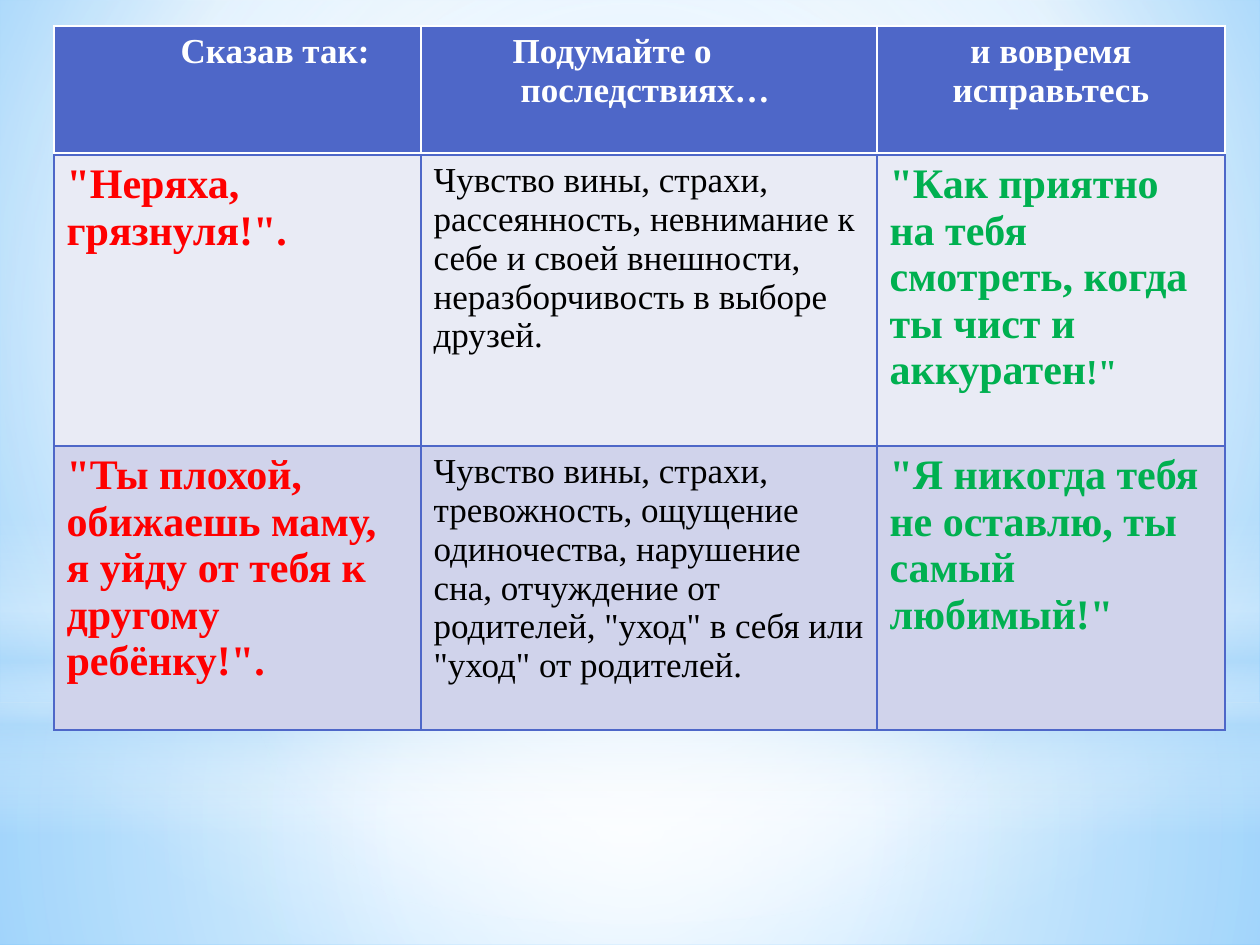
import lxml.etree
import pptx
import pptx.dml.color
import pptx.enum.shapes
import pptx.enum.text
import pptx.oxml.ns
import pptx.util

SCALE = 914400 / 126
FONT = "Times New Roman"
COLORS = {
    "white": "FFFFFF",
    "black": "000000",
    "sky": "9ED5FF",
    "azure": "5BB9FF",
    "pale": "B4DCFA",
    "header": "4E67C8",
    "light_row": "E9EBF5",
    "dark_row": "D0D3EB",
    "warning": "FF0000",
    "praise": "00B050",
}
COLUMNS = [367, 456, 348]
BODY_STYLES = [(24, "warning", True), (20, "black", False), (24, "praise", True)]
HEADERS = [
    [("Сказав так:", 114)],
    [("Подумайте о", 79), ("последствиях…", 87)],
    [("и вовремя исправьтесь", None)],
]
BODY = [
    [
        ['"Неряха, грязнуля!".'],
        ["Чувство вины, страхи, рассеянность, невнимание к себе и своей внешности, "
         "неразборчивость в выборе друзей."],
        ['"Как приятно на тебя смотреть, когда ты чист и аккуратен', '!"'],
    ],
    [
        ['"Ты плохой, обижаешь маму, я уйду от тебя к другому ребёнку!".'],
        ["Чувство вины, страхи, тревожность, ощущение одиночества, нарушение сна, "
         'отчуждение от родителей, "уход" в себя или "уход" от родителей.'],
        ['"Я никогда тебя не оставлю, ты самый любимый!"'],
    ],
]


def emu(pixels):
    return pptx.util.Emu(round(pixels * SCALE))


def rgb(name):
    return pptx.dml.color.RGBColor.from_string(COLORS[name])


def add_element(parent, tag, **attributes):
    element = lxml.etree.SubElement(parent, pptx.oxml.ns.qn(tag))
    for name, value in attributes.items():
        element.set(name, str(value))
    return element


def set_gradient(fill, owner, stops, focus=None):
    fill.gradient()
    gradient = next(owner.iter(pptx.oxml.ns.qn("a:gradFill")))
    for child in list(gradient):
        gradient.remove(child)
    stop_list = add_element(gradient, "a:gsLst")
    for position, color, opacity in stops:
        stop = add_element(stop_list, "a:gs", pos=position * 1000)
        color_element = add_element(stop, "a:srgbClr", val=COLORS[color])
        if opacity < 100:
            add_element(color_element, "a:alpha", val=opacity * 1000)
    if focus:
        path_element = add_element(gradient, "a:path", path="circle")
        sides = {side: value * 1000 for side, value in zip("ltrb", focus)}
        add_element(path_element, "a:fillToRect", **sides)
    else:
        add_element(gradient, "a:lin", ang=5400000, scaled=0)


def add_glow(slide, kind, box, stops, focus=None):
    shape = slide.shapes.add_shape(kind, *map(emu, box))
    shape.shadow.inherit = False
    shape.line.fill.background()
    set_gradient(shape.fill, shape.element, stops, focus)


def add_backdrop(slide, box):
    left, top, width, height = box
    kinds = pptx.enum.shapes.MSO_SHAPE
    center = (50, 50, 50, 50)
    horizon = 703
    set_gradient(slide.background.fill, slide.element,
                 [(0, "sky", 100), (60, "white", 100), (100, "azure", 100)], (20, 10, 20, 60))
    add_glow(slide, kinds.RECTANGLE, (left, top + horizon, width, height - horizon),
             [(0, "white", 91), (37, "white", 76), (100, "pale", 79)], center)
    add_glow(slide, kinds.RECTANGLE, (left, top, width, horizon),
             [(0, "white", 89), (48, "white", 62), (100, "pale", 79)], center)
    add_glow(slide, kinds.RECTANGLE, (left, top + 519, width, 315),
             [(0, "white", 0), (29, "white", 30), (45, "pale", 40),
              (55, "white", 26), (65, "pale", 60), (100, "white", 0)])
    add_glow(slide, kinds.OVAL, (left, top + 220, width, horizon),
             [(0, "white", 100), (56, "white", 0)], center)


def add_grid(slide, box, rows):
    shape = slide.shapes.add_table(len(rows), len(COLUMNS), *map(emu, box))
    table = shape.table
    for column, width in zip(table.columns, COLUMNS):
        column.width = emu(width)
    for row, height in zip(table.rows, rows):
        row.height = emu(height)
    return table


def style_cell(cell, fill, border, bottom=1):
    properties = cell._tc.get_or_add_tcPr()
    for side in "LRTB":
        width = bottom if side == "B" else 1
        line = add_element(properties, f"a:ln{side}", w=pptx.util.Pt(width))
        line_fill = add_element(line, "a:solidFill")
        add_element(line_fill, "a:srgbClr", val=COLORS[border])
    cell.fill.solid()
    cell.fill.fore_color.rgb = rgb(fill)


def style_run(run, size, color, bold):
    run.font.name = FONT
    run.font.size = pptx.util.Pt(size)
    run.font.bold = bold
    run.font.color.rgb = rgb(color)


def add_header(slide, box):
    table = add_grid(slide, box, [box[3]])
    for cell, lines in zip(table.rows[0].cells, HEADERS):
        style_cell(cell, "header", "white", 3)
        cell.text_frame.text = "\n".join(text for text, indent in lines)
        for paragraph, (text, indent) in zip(cell.text_frame.paragraphs, lines):
            if indent is None:
                paragraph.alignment = pptx.enum.text.PP_ALIGN.CENTER
            else:
                paragraph._p.get_or_add_pPr().set("marL", str(emu(indent)))
            style_run(paragraph.runs[0], 20, "white", True)


def add_body(slide, box):
    first_row = 291
    table = add_grid(slide, box, [first_row, box[3] - first_row])
    for row, texts, fill in zip(table.rows, BODY, ["light_row", "dark_row"]):
        for cell, parts, (size, color, bold) in zip(row.cells, texts, BODY_STYLES):
            style_cell(cell, fill, "header")
            paragraph = cell.text_frame.paragraphs[0]
            for index, part in enumerate(parts):
                run = paragraph.add_run()
                run.text = part
                style_run(run, 20 if index else size, color, bold)


def main():
    presentation = pptx.Presentation()
    presentation.slide_width = emu(1260)
    presentation.slide_height = emu(945)
    slide = presentation.slides.add_slide(presentation.slide_layouts[6])
    add_backdrop(slide, (0, 0, 1260, 945))
    add_header(slide, (54, 26, sum(COLUMNS), 128))
    add_body(slide, (54, 155, sum(COLUMNS), 575))
    presentation.save("out.pptx")


if __name__ == "__main__":
    main()
